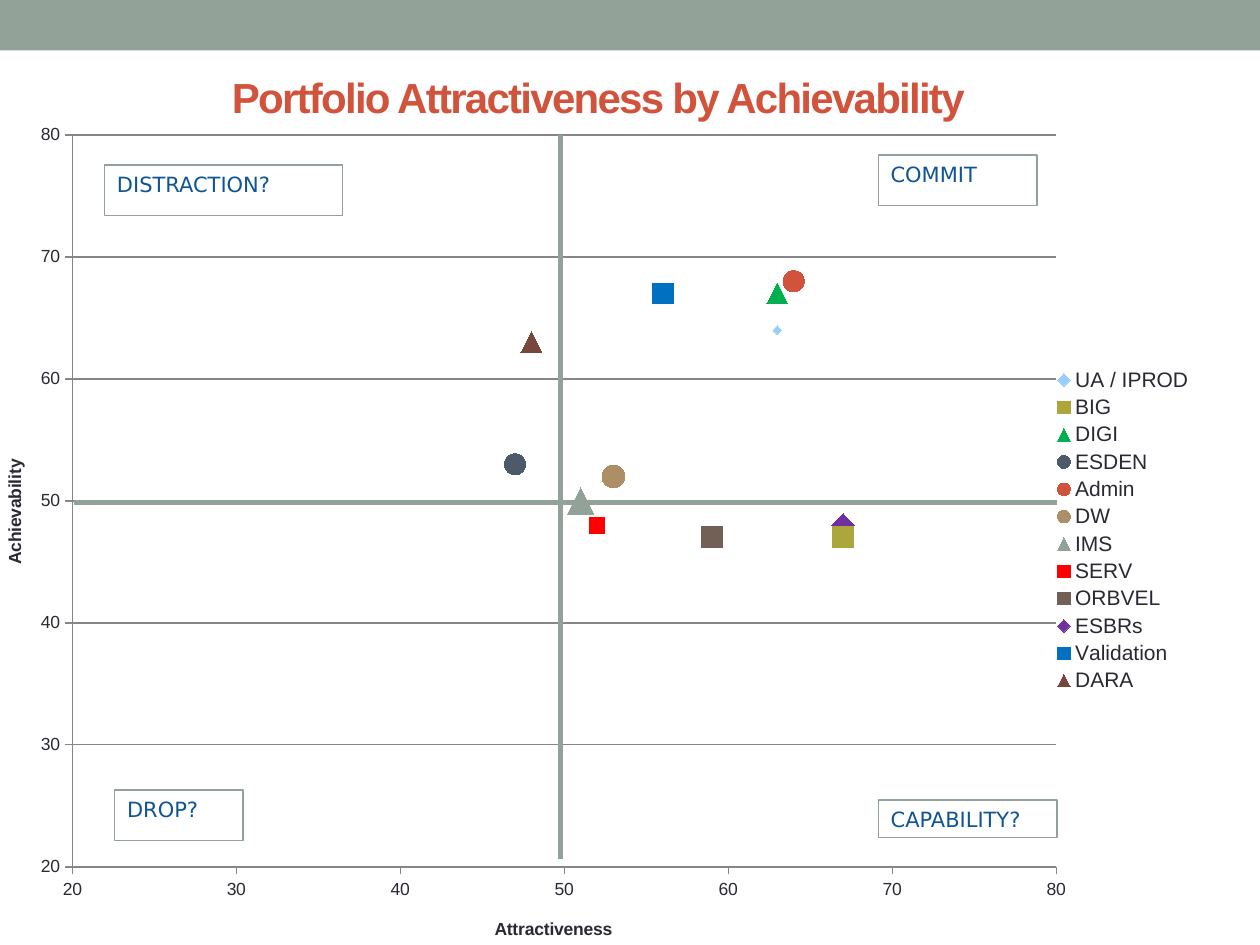
from lxml import etree
from pptx import Presentation, util as u
from pptx.chart.data import XyChartData
from pptx.dml.color import RGBColor
from pptx.enum import chart as ch, shapes, text
from pptx.oxml import ns

COLORS = {"sage": "93A299", "title": "D2533C", "ink": "292934",
          "label": "0F5494", "grid": "868686"}
TITLE = "Portfolio Attractiveness by Achievability"
AXES = ("Attractiveness", "Achievability")
SERIES = [
    ("UA / IPROD", 63, 64, "DIAMOND", 5, "99CCFF"),
    ("BIG", 67, 47, "SQUARE", 12, "ACA73B"),
    ("DIGI", 63, 67, "TRIANGLE", 12, "00B050"),
    ("ESDEN", 47, 53, "CIRCLE", 12, "4C5A6A"),
    ("Admin", 64, 68, "CIRCLE", 12, "D2533C"),
    ("DW", 53, 52, "CIRCLE", 13, "AD8F67"),
    ("IMS", 51, 50, "TRIANGLE", 15, "93A299"),
    ("SERV", 52, 48, "SQUARE", 9, "FF0000"),
    ("ORBVEL", 59, 47, "SQUARE", 12, "726056"),
    ("ESBRs", 67, 48, "DIAMOND", 13, "7030A0"),
    ("Validation", 56, 67, "SQUARE", 12, "0070C0"),
    ("DARA", 48, 63, "TRIANGLE", 12, "79463D"),
]
PLOT = {"x": 0.06, "y": 0.023, "w": 0.816, "h": 0.883}
DIVIDERS = [(4.45, 6.82, 4.45, 1.07), (8.39, 3.99, 0.59, 3.99)]
QUADRANTS = [
    ("DISTRACTION?", 0.83, 1.31, 1.89, 0.4),
    ("COMMIT", 6.97, 1.23, 1.26, 0.4),
    ("DROP?", 0.91, 6.27, 1.02, 0.4),
    ("CAPABILITY?", 6.97, 6.35, 1.42, 0.3),
]


def inches(*values):
    return [u.Inches(v) for v in values]


def rgb(value):
    return RGBColor.from_string(COLORS.get(value, value))


def style(font, size, color, name="Arial", bold=False):
    for key, value in {"size": u.Pt(size), "name": name, "bold": bold}.items():
        setattr(font, key, value)
    font.color.rgb = rgb(color)


def outline(line, color, width):
    line.color.rgb = rgb(color)
    line.width = u.Pt(width)


def add_rect(s, *box):
    sp = s.shapes.add_shape(shapes.MSO_SHAPE.RECTANGLE, *inches(*box))
    sp.shadow.inherit = False
    return sp


def add_title(s):
    sp = s.shapes.title
    sp.left, sp.top, sp.width, sp.height = inches(1.74, 0.46, 6.39, 0.61)
    tf = sp.text_frame
    tf.vertical_anchor = text.MSO_ANCHOR.MIDDLE
    p = tf.paragraphs[0]
    p.alignment = text.PP_ALIGN.LEFT
    r = p.add_run()
    r.text = TITLE
    style(r.font, 24, "title", bold=True)
    r.font._element.set("spc", "-100")


def format_axis(axis, title):
    settings = {"minimum_scale": 20, "maximum_scale": 80, "major_unit": 10,
                "major_tick_mark": ch.XL_TICK_MARK.OUTSIDE,
                "minor_tick_mark": ch.XL_TICK_MARK.NONE,
                "has_major_gridlines": title == AXES[1]}
    for key, value in settings.items():
        setattr(axis, key, value)
    outline(axis.format.line, "grid", 0.75)
    if axis.has_major_gridlines:
        outline(axis.major_gridlines.format.line, "grid", 0.75)
    axis.tick_labels.number_format = "0"
    axis.tick_labels.number_format_is_linked = False
    style(axis.tick_labels.font, 10, "ink")
    r = axis.axis_title.text_frame.paragraphs[0].add_run()
    r.text = title
    style(r.font, 10, "ink", bold=True)


def place_plot(chart):
    area = chart._chartSpace.chart.plotArea
    for old in area.findall(ns.qn("c:layout")):
        area.remove(old)
    layout = etree.Element(ns.qn("c:layout"))
    area.insert(0, layout)
    manual = etree.SubElement(layout, ns.qn("c:manualLayout"))
    parts = {"layoutTarget": "inner", "xMode": "edge", "yMode": "edge", **PLOT}
    for tag, value in parts.items():
        etree.SubElement(manual, ns.qn("c:" + tag)).set("val", str(value))


def add_scatter(s):
    data = XyChartData()
    for name, x, y, *_ in SERIES:
        data.add_series(name).add_data_point(x, y)
    chart = s.shapes.add_chart(ch.XL_CHART_TYPE.XY_SCATTER,
                               *inches(0, 0.92, 9.57, 6.58), data).chart
    style(chart.font, 10, "ink")
    chart.has_title = False
    chart.has_legend = True
    chart.legend.position = ch.XL_LEGEND_POSITION.RIGHT
    chart.legend.include_in_layout = False
    style(chart.legend.font, 12, "ink")
    chart.plots[0].vary_by_categories = False
    for series, (*_, marker, size, color) in zip(chart.plots[0].series, SERIES):
        series.smooth = False
        series.format.line.fill.background()
        series.marker.style = ch.XL_MARKER_STYLE[marker]
        series.marker.size = size
        series.marker.format.fill.solid()
        series.marker.format.fill.fore_color.rgb = rgb(color)
        series.marker.format.line.fill.background()
    for axis, title in zip((chart.category_axis, chart.value_axis), AXES):
        format_axis(axis, title)
    place_plot(chart)


def add_divider(s, *ends):
    line = s.shapes.add_connector(shapes.MSO_CONNECTOR.STRAIGHT, *inches(*ends))
    outline(line.line, "sage", 3)
    etree.SubElement(line._element.spPr, ns.qn("a:effectLst"))


def add_quadrant(s, label, *box):
    sp = add_rect(s, *box)
    sp.fill.background()
    outline(sp.line, "sage", 0.75)
    tf = sp.text_frame
    tf.word_wrap = True
    tf.vertical_anchor = text.MSO_ANCHOR.TOP
    p = tf.paragraphs[0]
    p.alignment = text.PP_ALIGN.LEFT
    r = p.add_run()
    r.text = label
    style(r.font, 12, "label", "DejaVu Sans")


def main():
    prs = Presentation()
    prs.slide_width, prs.slide_height = inches(10, 7.5)
    s = prs.slides.add_slide(prs.slide_layouts[5])
    band = add_rect(s, 0, 0, 10, 0.4)
    band.fill.solid()
    band.fill.fore_color.rgb = rgb("sage")
    band.line.fill.background()
    add_title(s)
    add_scatter(s)
    for ends in DIVIDERS:
        add_divider(s, *ends)
    for quadrant in QUADRANTS:
        add_quadrant(s, *quadrant)
    prs.save("out.pptx")


if __name__ == "__main__":
    main()
